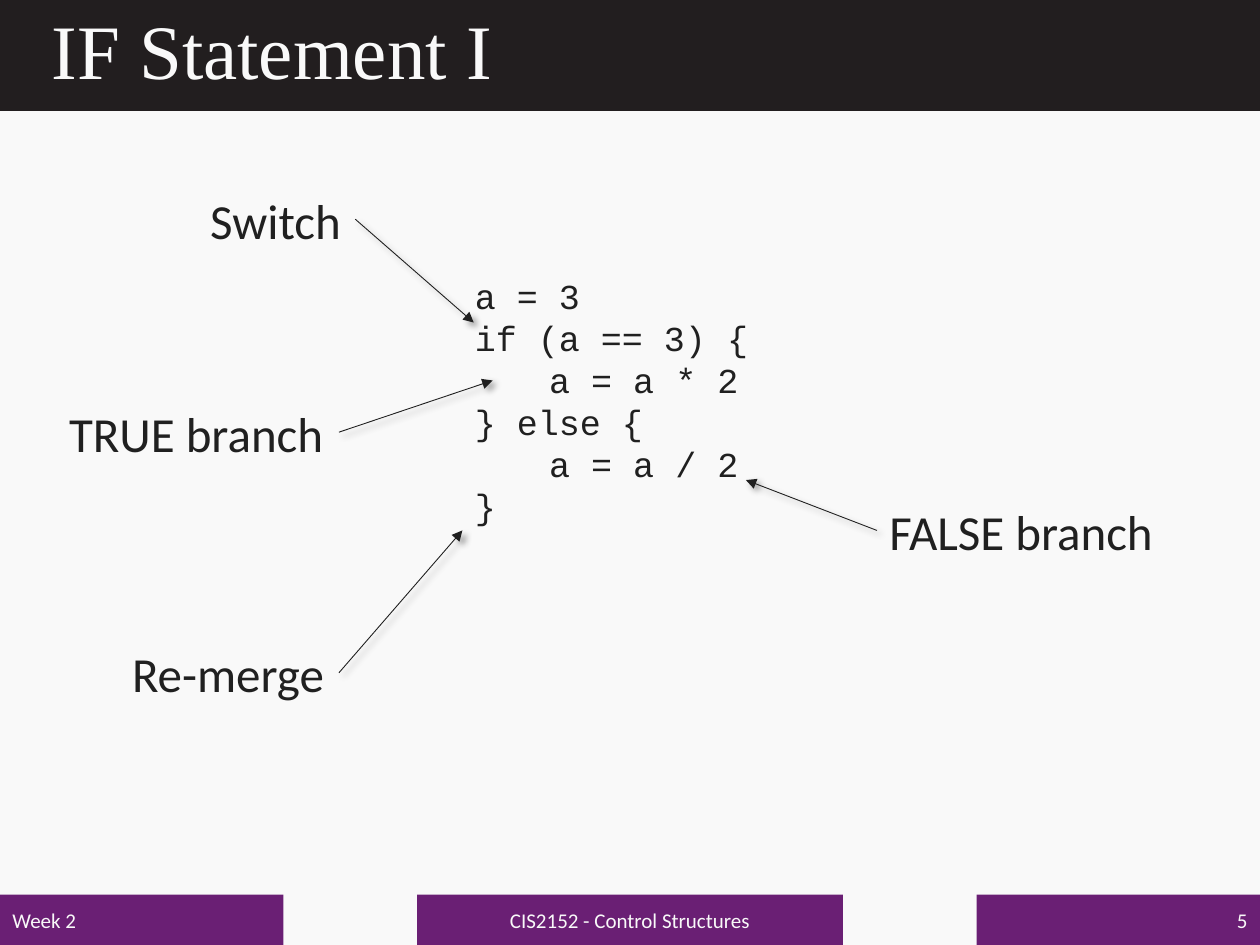
import dataclasses

import pptx
import pptx.dml.color
import pptx.enum.shapes
import pptx.enum.text
import pptx.oxml
import pptx.oxml.ns
import pptx.util

Inches = pptx.util.Inches
Align = pptx.enum.text.PP_ALIGN
Anchor = pptx.enum.text.MSO_ANCHOR

SHADOW = (
    f'<a:effectLst {pptx.oxml.ns.nsdecls("a")}>'
    '<a:outerShdw blurRad="50800" dist="38100" dir="2700000" algn="tl" rotWithShape="0">'
    '<a:srgbClr val="000000"><a:alpha val="40000"/></a:srgbClr>'
    '</a:outerShdw></a:effectLst>'
)
ARROWHEAD = f'<a:tailEnd {pptx.oxml.ns.nsdecls("a")} type="triangle"/>'


@dataclasses.dataclass(frozen=True)
class Theme:
    paper: str = "F9F9F9"
    ink: str = "202020"
    band: str = "221E1F"
    accent: str = "6A1F74"
    title_font: str = "Times New Roman"
    body_font: str = "Calibri"
    code_font: str = "Courier New"
    title_size: int = 44
    label_size: int = 28
    code_size: int = 20
    footer_size: int = 12


def rgb(value):
    return pptx.dml.color.RGBColor.from_string(value)


class SlideBuilder:
    def __init__(self, slide, theme):
        self.slide = slide
        self.theme = theme
        fill = slide.background.fill
        fill.solid()
        fill.fore_color.rgb = rgb(theme.paper)

    def set_text(self, shape, lines, font, size, color, frame_format=None,
                 paragraph_format=None, indent=0):
        frame = shape.text_frame
        for name, value in (frame_format or {}).items():
            setattr(frame, name, value)
        frame.text = "\n".join(line.lstrip("\t") for line in lines)
        font_format = {"name": font, "size": pptx.util.Pt(size)}
        for line, paragraph in zip(lines, frame.paragraphs):
            for name, value in (paragraph_format or {}).items():
                setattr(paragraph, name, value)
            if line.startswith("\t"):
                paragraph._p.get_or_add_pPr().set("marL", str(Inches(indent)))
            for run in paragraph.runs:
                for name, value in font_format.items():
                    setattr(run.font, name, value)
                run.font.color.rgb = rgb(color)

    def bar(self, box, color):
        shape = self.slide.shapes.add_shape(
            pptx.enum.shapes.MSO_SHAPE.RECTANGLE, *map(Inches, box))
        shape.shadow.inherit = False
        shape.fill.solid()
        shape.fill.fore_color.rgb = rgb(color)
        shape.line.fill.background()
        return shape

    def title(self, text, box, band_box):
        title = self.slide.shapes.title
        title.element.addprevious(self.bar(band_box, self.theme.band).element)
        for name, value in zip(("left", "top", "width", "height"), box):
            setattr(title, name, Inches(value))
        self.set_text(title, [text], self.theme.title_font, self.theme.title_size,
                      self.theme.paper,
                      {"vertical_anchor": Anchor.MIDDLE, "word_wrap": True},
                      {"alignment": Align.LEFT, "line_spacing": 0.9})

    def footer(self, text, box, alignment):
        self.set_text(self.bar(box, self.theme.accent), [text], self.theme.body_font,
                      self.theme.footer_size, self.theme.paper,
                      {"vertical_anchor": Anchor.MIDDLE}, {"alignment": alignment})

    def code(self, lines, box, indent):
        shape = self.slide.shapes.add_textbox(*map(Inches, box))
        self.set_text(shape, lines, self.theme.code_font, self.theme.code_size,
                      self.theme.ink, {"word_wrap": True}, indent=indent)

    def label(self, text, box):
        shape = self.slide.shapes.add_textbox(*map(Inches, box))
        self.set_text(shape, [text], self.theme.body_font, self.theme.label_size,
                      self.theme.ink, {"word_wrap": False})

    def arrow(self, start, end):
        connector = self.slide.shapes.add_connector(
            pptx.enum.shapes.MSO_CONNECTOR.STRAIGHT, *map(Inches, start + end))
        connector.line.width = pptx.util.Pt(0.5)
        connector.line.color.rgb = rgb(self.theme.ink)
        properties = connector.element.spPr
        properties.find(pptx.oxml.ns.qn("a:ln")).append(pptx.oxml.parse_xml(ARROWHEAD))
        properties.append(pptx.oxml.parse_xml(SHADOW))


def main():
    presentation = pptx.Presentation()
    presentation.slide_width = Inches(10)
    presentation.slide_height = Inches(7.5)
    slide = presentation.slides.add_slide(presentation.slide_layouts[5])
    builder = SlideBuilder(slide, Theme())

    builder.title("IF Statement I", (0.31, 0, 9.39, 0.86), (0, 0, 10, 0.88))

    footers = [
        ("Week 2", 0, 2.25, Align.LEFT),
        ("CIS2152 - Control Structures", 3.31, 3.38, Align.CENTER),
        ("5", 7.75, 2.25, Align.RIGHT),
    ]
    for text, left, width, alignment in footers:
        builder.footer(text, (left, 7.1, width, 0.4), alignment)

    code = ["a = 3", "if (a == 3) {", "\ta = a * 2", "} else {", "\ta = a / 2", "}"]
    builder.code(code, (3.67, 2.13, 2.86, 2.12), indent=0.59)

    callouts = [
        ("Switch", (1.57, 1.46, 1.25), (2.82, 1.74), (3.76, 2.56)),
        ("TRUE branch", (0.45, 3.15, 2.24), (2.69, 3.43), (3.91, 3.02)),
        ("FALSE branch", (6.96, 3.93, 2.32), (6.96, 4.21), (5.92, 3.81)),
        ("Re-merge", (0.95, 5.06, 1.74), (2.69, 5.34), (3.67, 4.21)),
    ]
    for text, place, start, end in callouts:
        builder.label(text, place + (0.57,))
        builder.arrow(start, end)

    presentation.save("out.pptx")


if __name__ == "__main__":
    main()
